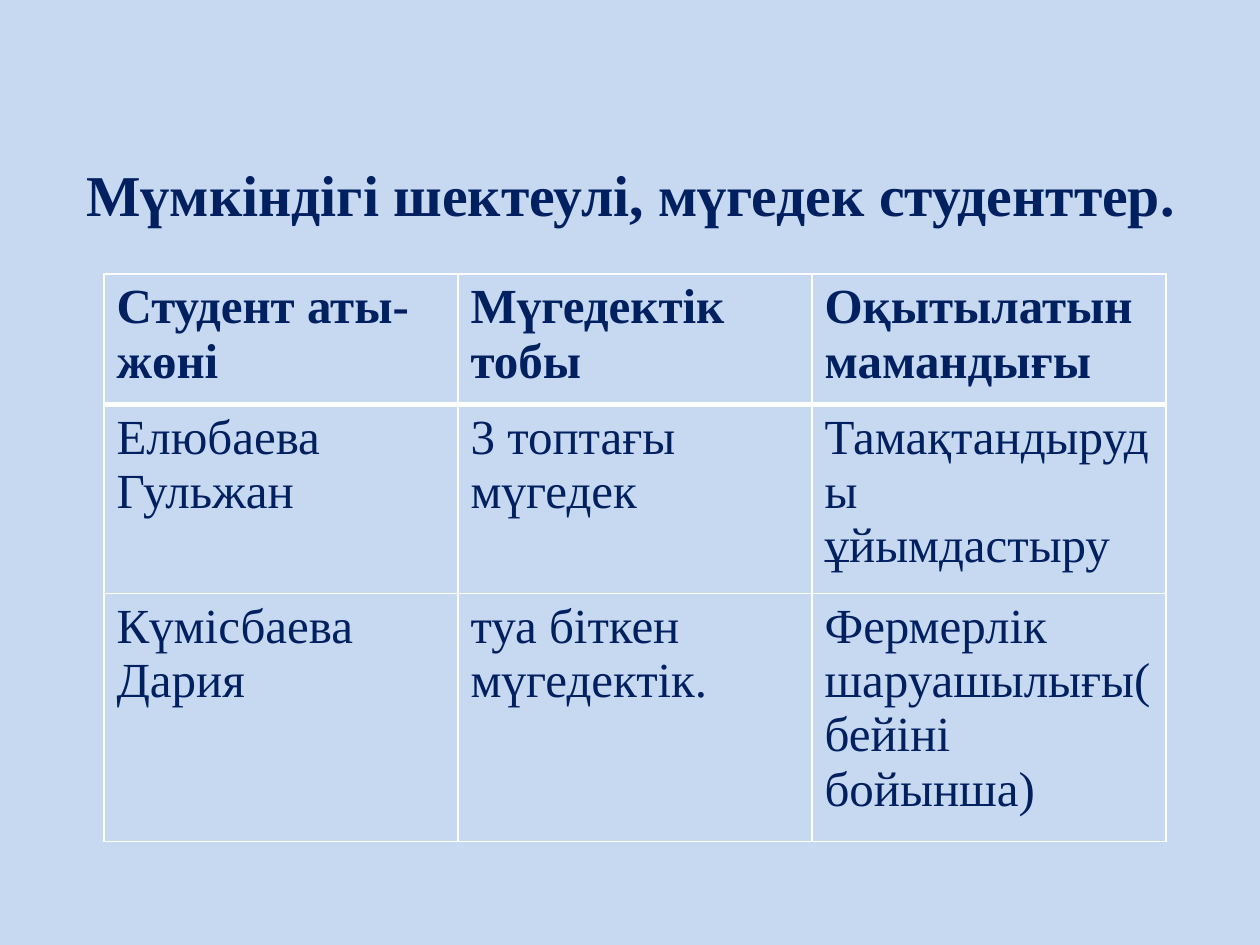
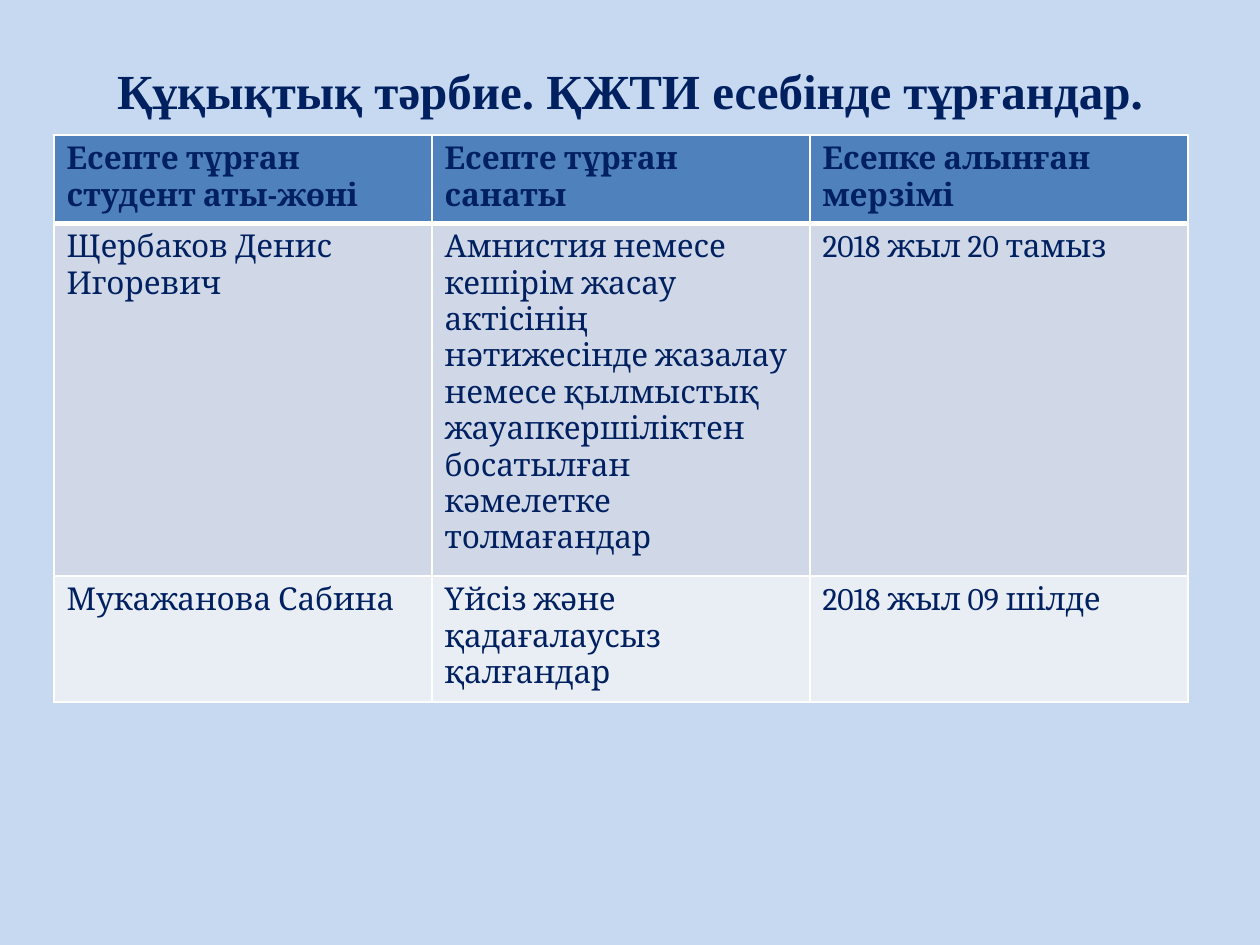
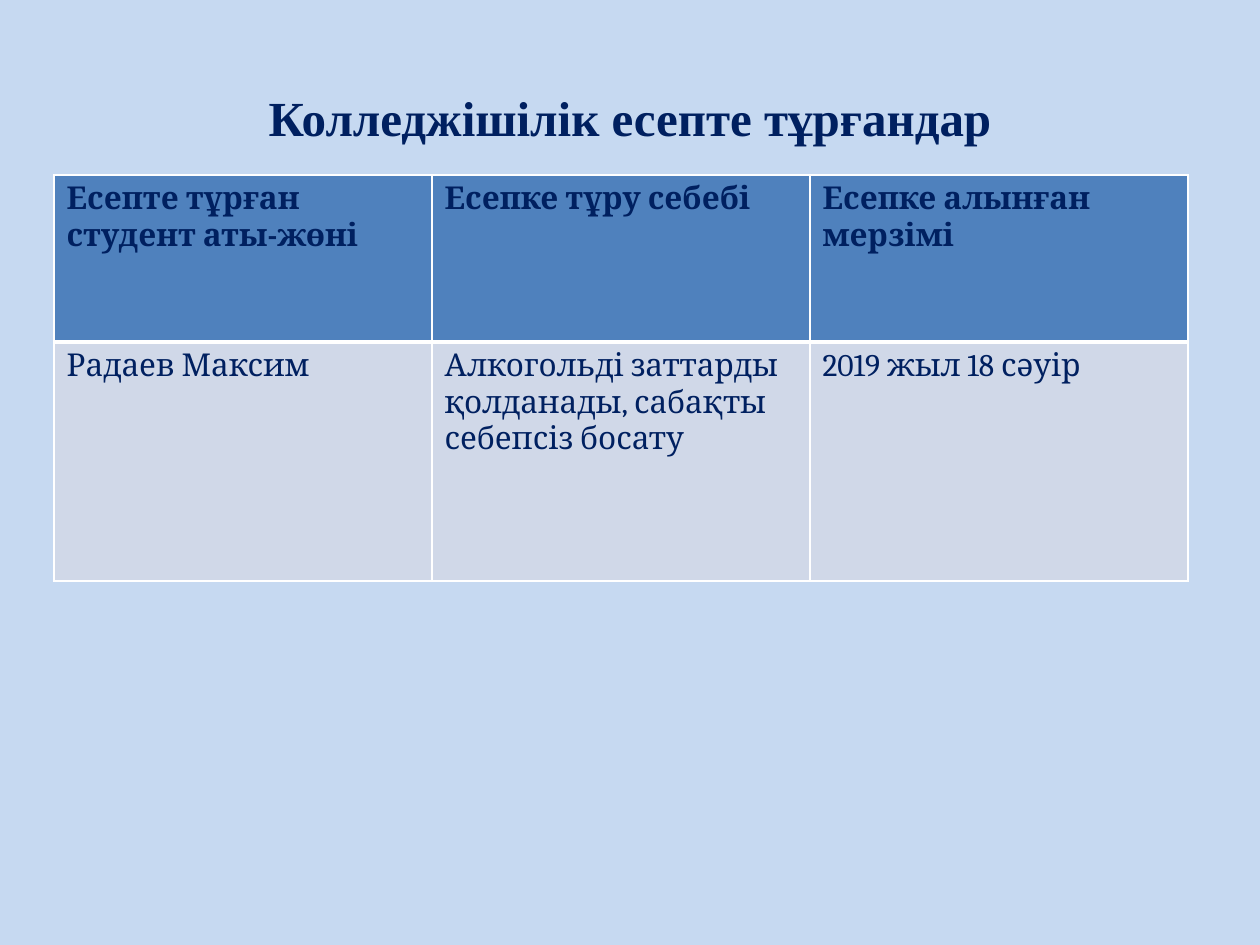
from lxml import etree
from pptx import Presentation
from pptx.dml.color import RGBColor
from pptx.enum.text import MSO_ANCHOR, PP_ALIGN
from pptx.oxml.ns import qn
from pptx.util import Emu, Pt

TOP, MIDDLE = MSO_ANCHOR.TOP, MSO_ANCHOR.MIDDLE
CENTER = PP_ALIGN.CENTER

EMU_PER_PX = 914400 / 126
COLORS = {
    "background": "C6D9F1",
    "text": "002060",
    "grid": "FFFFFF",
    "header": "4F81BD",
    "odd": "D0D8E8",
    "even": "E9EDF4",
}
TITLE_FONT = "Times New Roman"
TITLE_BOX = (63, 38, 1134, 157)


def px(length):
    return Emu(round(length * EMU_PER_PX))


def rgb(name):
    return RGBColor.from_string(COLORS[name])


def style_font(font, **values):
    for attribute, value in values.items():
        setattr(font, attribute, value)
    font.color.rgb = rgb("text")


def add_slide(deck):
    slide = deck.slides.add_slide(deck.slide_layouts[6])
    slide.background.fill.solid()
    slide.background.fill.fore_color.rgb = rgb("background")
    return slide


def add_title(slide, text, size=28, box=TITLE_BOX, anchor=MIDDLE, insets=(6, 6)):
    frame = slide.shapes.add_textbox(*map(px, box)).text_frame
    top, bottom = insets
    layout = {"word_wrap": True, "vertical_anchor": anchor,
              "margin_top": px(top), "margin_bottom": px(bottom)}
    for attribute, value in layout.items():
        setattr(frame, attribute, value)
    heading = frame.paragraphs[0]
    heading.text = text
    heading.alignment = CENTER
    style_font(heading.font, name=TITLE_FONT, size=Pt(size), bold=True)


def add_borders(cell, widths):
    properties = cell._tc.get_or_add_tcPr()
    for side, width in widths.items():
        line = etree.SubElement(properties, qn(f"a:ln{side}"), w=str(Pt(width)))
        fill = etree.SubElement(line, qn("a:solidFill"))
        etree.SubElement(fill, qn("a:srgbClr"), val=COLORS["grid"])


def fill_cell(cell, row, filled):
    if not filled:
        cell.fill.background()
        return
    band = "header" if row == 0 else ("even", "odd")[row % 2]
    cell.fill.solid()
    cell.fill.fore_color.rgb = rgb(band)


def add_student_table(slide, left, top, column_width, row_heights, rows,
                      font="Cambria", size=18, filled=True):
    columns = len(rows[0])
    table = slide.shapes.add_table(
        len(rows), columns, px(left), px(top),
        px(column_width * columns), px(sum(row_heights))).table
    table.first_row = table.horz_banding = False
    for column in table.columns:
        column.width = px(column_width)
    for r, (height, texts) in enumerate(zip(row_heights, rows)):
        table.rows[r].height = px(height)
        for c, text in enumerate(texts):
            cell = table.cell(r, c)
            # The rule under the header is heavier than the grid
            add_borders(cell, {"L": 1, "R": 1, "T": 3 if r == 1 else 1,
                               "B": 3 if r == 0 else 1})
            fill_cell(cell, r, filled)
            cell.text = text
            style_font(cell.text_frame.paragraphs[0].font,
                       name=font, size=Pt(size), bold=r == 0)


def main():
    deck = Presentation()
    deck.slide_width, deck.slide_height = px(1260), px(945)

    # Students with disabilities
    slide = add_slide(deck)
    add_title(slide, "Мүмкіндігі шектеулі, мүгедек студенттер.", size=33,
              box=(64, 145, 1134, 624), anchor=TOP, insets=(14, 6))
    add_student_table(slide, 104, 274, 354, (121, 121, 174), [
        ("Студент аты-жөні", "Мүгедектік тобы", "Оқытылатын мамандығы"),
        ("Елюбаева Гульжан", "3 топтағы мүгедек", "Тамақтандыруды ұйымдастыру"),
        ("Күмісбаева Дария", "туа біткен мүгедектік.",
         "Фермерлік шаруашылығы(бейіні бойынша)"),
    ], font=TITLE_FONT, size=28, filled=False)

    # Students on the juvenile register
    slide = add_slide(deck)
    add_title(slide, "Құқықтық тәрбие. ҚЖТИ есебінде тұрғандар.", insets=(6, 60))
    add_student_table(slide, 54, 135, 378, (52, 52, 52), [
        ("Есепте тұрған студент аты-жөні", "Есепте тұрған санаты",
         "Есепке алынған мерзімі"),
        ("Щербаков Денис Игоревич",
         "Амнистия немесе кешірім жасау актісінің нәтижесінде жазалау немесе "
         "қылмыстық жауапкершіліктен босатылған кәмелетке толмағандар",
         "2018 жыл 20 тамыз"),
        ("Мукажанова Сабина", "Үйсіз және қадағалаусыз қалғандар",
         "2018 жыл 09 шілде"),
    ])

    # Students on the college register
    slide = add_slide(deck)
    add_title(slide, "Колледжішілік есепте тұрғандар")
    add_student_table(slide, 54, 175, 378, (167, 239), [
        ("Есепте тұрған студент аты-жөні", "Есепке тұру себебі",
         "Есепке алынған мерзімі"),
        ("Радаев Максим", "Алкогольді заттарды қолданады, сабақты себепсіз босату",
         "2019 жыл 18 сәуір"),
    ])

    deck.save("out.pptx")


if __name__ == "__main__":
    main()
